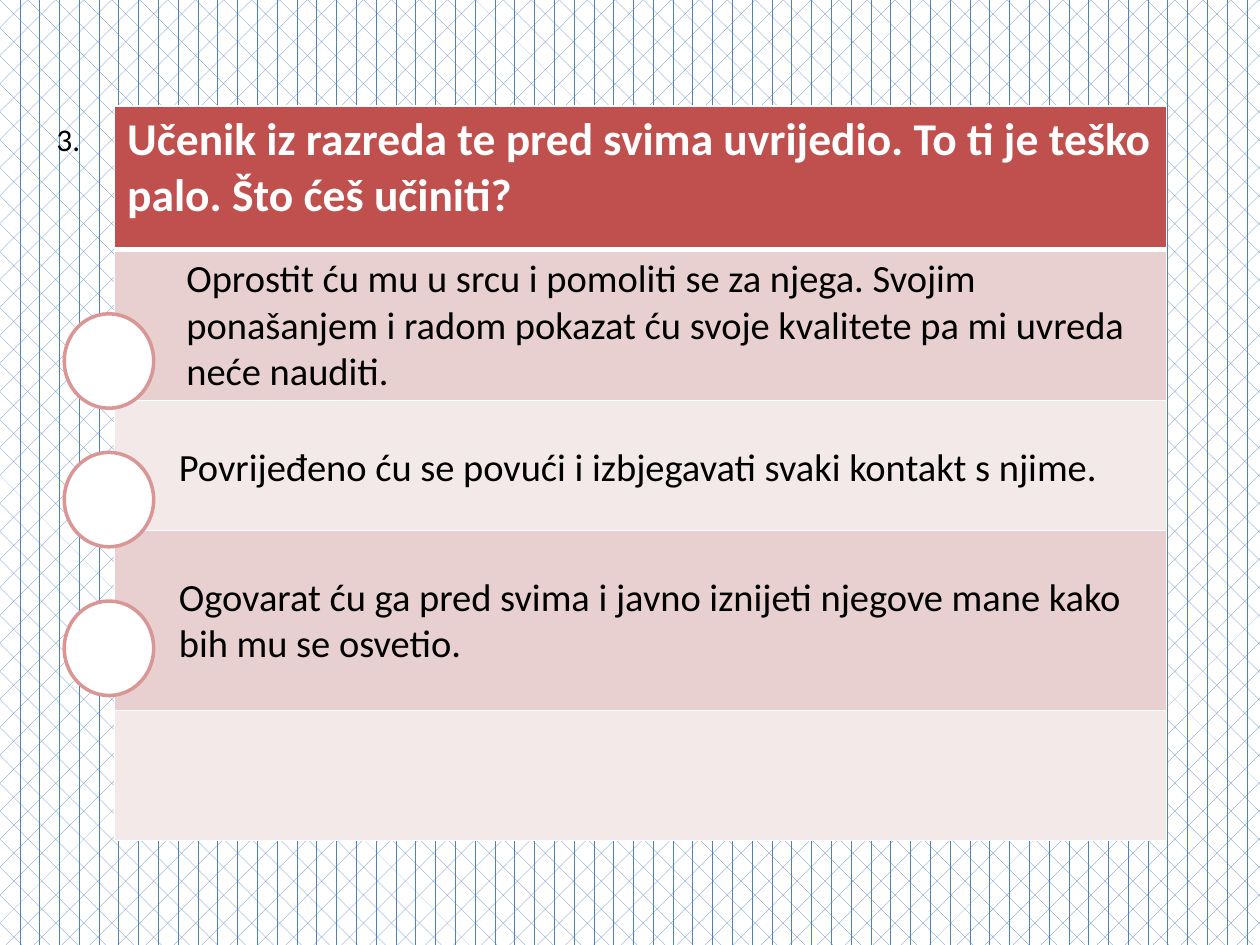
from dataclasses import dataclass

from pptx import Presentation
from pptx.dml.color import RGBColor
from pptx.enum.dml import MSO_PATTERN
from pptx.enum.shapes import MSO_SHAPE
from pptx.oxml.ns import qn
from pptx.util import Inches, Pt
from lxml.etree import SubElement


@dataclass(frozen=True)
class Theme:
    font: str = "Calibri"
    ink: str = "000000"
    paper: str = "FFFFFF"
    pattern: str = "4F81BD"
    header: str = "C0504D"
    bands: tuple = ("E8D0D0", "F4E9E9")
    ring: str = "D99694"
    number_size: int = 18
    question_size: int = 26
    answer_size: int = 22
    rule: int = 1
    header_rule: int = 3


class Deck:
    COLUMNS = 100

    def __init__(self, prs, theme):
        self.theme = theme
        self.unit = prs.slide_width / self.COLUMNS
        self.s = prs.slides.add_slide(prs.slide_layouts[6])

    def grid(self, *cells):
        return [round(c * self.unit) for c in cells]

    def background(self):
        fill = self.s.background.fill
        fill.patterned()
        fill.pattern = MSO_PATTERN.DIVOT
        fill.fore_color.rgb = RGBColor.from_string(self.theme.pattern)
        fill.back_color.rgb = RGBColor.from_string(self.theme.paper)

    def set_text(self, tf, text, size, color, bold=False):
        tf.word_wrap = True
        p = tf.paragraphs[0]
        p.text = text
        p.font.name = self.theme.font
        p.font.size = Pt(size)
        p.font.bold = bold
        p.font.color.rgb = RGBColor.from_string(color)

    def label(self, text, *box):
        sp = self.s.shapes.add_textbox(*self.grid(*box))
        self.set_text(sp.text_frame, text, self.theme.number_size,
                      self.theme.ink)

    def circle(self, *box):
        sp = self.s.shapes.add_shape(
            MSO_SHAPE.FLOWCHART_CONNECTOR, *self.grid(*box))
        sp.shadow.inherit = False
        sp.fill.solid()
        sp.fill.fore_color.rgb = RGBColor.from_string(self.theme.paper)
        sp.line.color.rgb = RGBColor.from_string(self.theme.ring)
        sp.line.width = Pt(2)

    def borders(self, cell, top, bottom):
        tcPr = cell._tc.get_or_add_tcPr()
        widths = {"a:lnL": self.theme.rule, "a:lnR": self.theme.rule,
                  "a:lnT": top, "a:lnB": bottom}
        for tag, width in widths.items():
            ln = SubElement(tcPr, qn(tag), w=str(Pt(width)))
            fill = SubElement(ln, qn("a:solidFill"))
            SubElement(fill, qn("a:srgbClr"), val=self.theme.paper)

    def table(self, left, top, width, question, question_height, answers):
        t = self.theme
        heights = [question_height] + [a[1] for a in answers]
        box = self.grid(left, top, width, sum(heights))
        table = self.s.shapes.add_table(len(heights), 1, *box).table
        table.horz_banding = False
        for row, height in zip(table.rows, heights):
            row.height = self.grid(height)[0]

        head = table.cell(0, 0)
        self.borders(head, t.rule, t.header_rule)
        head.fill.solid()
        head.fill.fore_color.rgb = RGBColor.from_string(t.header)
        self.set_text(head.text_frame, question, t.question_size, t.paper,
                      True)

        for i, (text, _, indent, drop) in enumerate(answers):
            cell = table.cell(i + 1, 0)
            self.borders(cell, t.rule if i else t.header_rule, t.rule)
            cell.fill.solid()
            cell.fill.fore_color.rgb = RGBColor.from_string(
                t.bands[i % len(t.bands)])
            cell.margin_left, cell.margin_top = self.grid(indent, drop)
            self.set_text(cell.text_frame, text, t.answer_size, t.ink)


def main():
    prs = Presentation()
    prs.slide_width, prs.slide_height = Inches(10), Inches(7.5)
    deck = Deck(prs, Theme())
    deck.background()
    deck.label("3.", 3.5, 9, 4.7, 4)
    answers = [
        ("Oprostit ću mu u srcu i pomoliti se za njega. Svojim ponašanjem "
         "i radom pokazat ću svoje kvalitete pa mi uvreda neće nauditi.",
         11.9, 5.7, 0.5),
        ("Povrijeđeno ću se povući i izbjegavati svaki kontakt s njime.",
         10.3, 5.1, 3.5),
        ("Ogovarat ću ga pred svima i javno iznijeti njegove mane kako "
         "bih mu se osvetio.", 14.3, 5.1, 3.5),
        ("", 10.3, 1, 0.5),
    ]
    deck.table(9.1, 8.4, 83.5,
               "Učenik iz razreda te pred svima uvrijedio. "
               "To ti je teško palo. Što ćeš učiniti?", 11.4, answers)
    for top in (24.9, 35.9, 47.7):
        deck.circle(5.1, top, 7.1, 7.5)
    prs.save("out.pptx")


if __name__ == "__main__":
    main()
